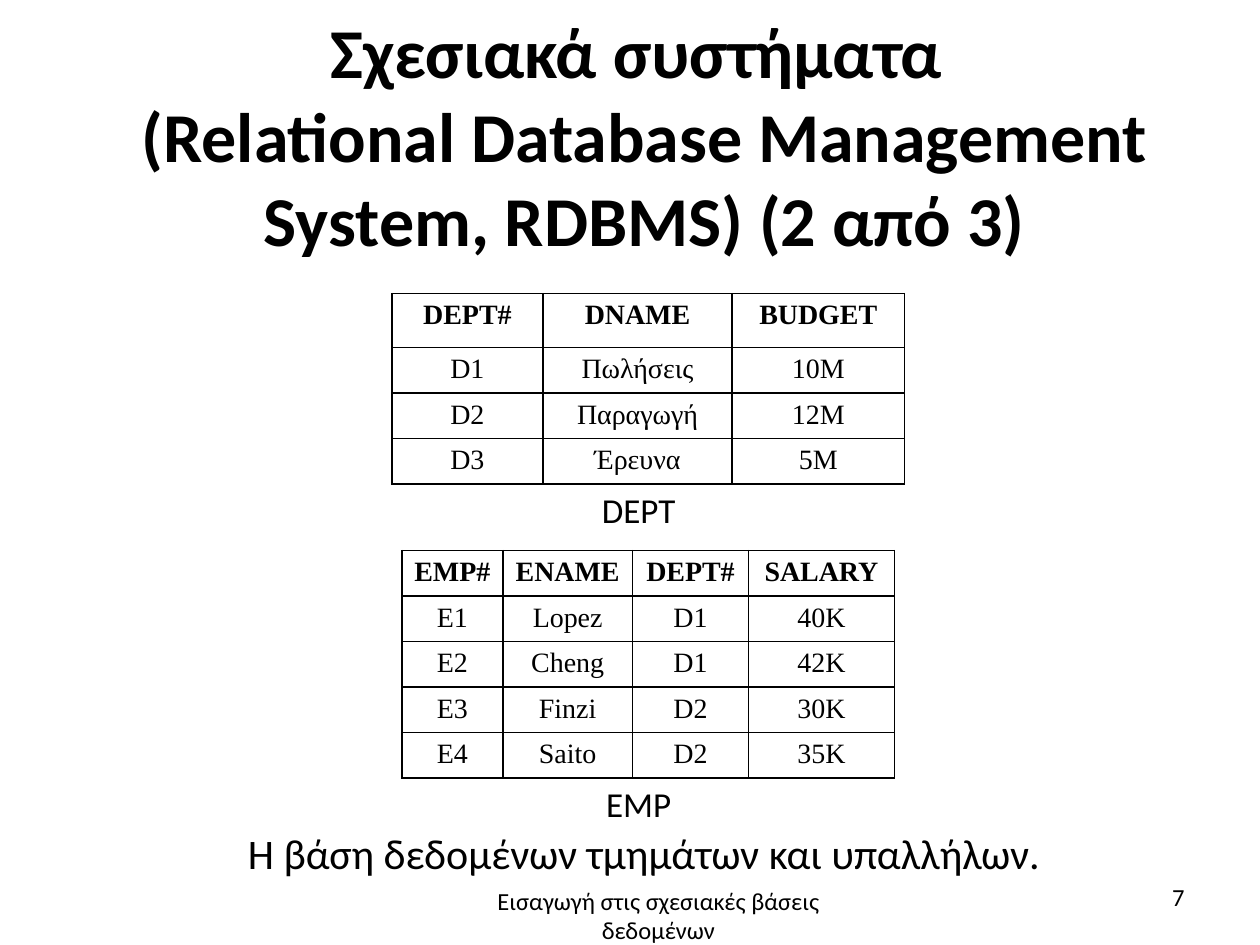
from lxml import etree
from pptx import Presentation
from pptx.dml.color import RGBColor
from pptx.enum.text import MSO_ANCHOR, MSO_AUTO_SIZE, PP_ALIGN
from pptx.oxml import parse_xml
from pptx.oxml.ns import qn
from pptx.util import Pt

BLACK = "000000"
NAMESPACE = "http://schemas.openxmlformats.org/drawingml/2006/main"


def color(hex_string):
    return RGBColor.from_string(hex_string)


def write(frame, text, size=14, font="Calibri", bold=False, align=PP_ALIGN.CENTER):
    frame.text = text
    for paragraph in frame.paragraphs:
        paragraph.alignment = align
        for run in paragraph.runs:
            run.font.size = Pt(size)
            run.font.name = font
            run.font.bold = bold
            run.font.color.rgb = color(BLACK)


presentation = Presentation()
presentation.slide_width = Pt(720)
presentation.slide_height = Pt(540)
slide = presentation.slides.add_slide(presentation.slide_layouts[1])

title = slide.shapes.title
title.left, title.top, title.width, title.height = Pt(36.7), Pt(-2.2), Pt(663), Pt(157.7)
write(
    title.text_frame,
    "Σχεσιακά συστήματα \n(Relational Database Management System, RDBMS) (2 από 3)",
    size=40,
    bold=True,
)
title.text_frame.vertical_anchor = MSO_ANCHOR.MIDDLE
title.text_frame.auto_size = MSO_AUTO_SIZE.NONE

captions = slide.placeholders[1]
captions.left, captions.top, captions.width, captions.height = Pt(69.8), Pt(275.8), Pt(590.4), Pt(221)
write(captions.text_frame, "DEPT\nEMP", size=20)
captions.text_frame.auto_size = MSO_AUTO_SIZE.NONE
for paragraph, space_before in zip(captions.text_frame.paragraphs, (4, 143.6)):
    paragraph.space_before = Pt(space_before)
    properties = paragraph.runs[0].font._element.getparent().getparent().get_or_add_pPr()
    properties.set("marL", "0")
    properties.set("indent", "0")
    etree.SubElement(properties, qn("a:buNone"))

tables = [
    (223.9, 167.8, [86.4, 108, 98.6], [30.7, 26, 26, 26], [
        ["DEPT#", "DNAME", "BUDGET"],
        ["D1", "Πωλήσεις", "10Μ"],
        ["D2", "Παραγωγή", "12Μ"],
        ["D3", "Έρευνα", "5Μ"],
    ]),
    (229.7, 314.6, [57.6, 74.2, 66.2, 83.5], [26] * 5, [
        ["EMP#", "ENAME", "DEPT#", "SALARY"],
        ["E1", "Lopez", "D1", "40K"],
        ["E2", "Cheng", "D1", "42K"],
        ["E3", "Finzi", "D2", "30K"],
        ["E4", "Saito", "D2", "35K"],
    ]),
]
for left, top, widths, heights, rows in tables:
    table = slide.shapes.add_table(
        len(rows), len(widths), Pt(left), Pt(top), Pt(sum(widths)), Pt(sum(heights))
    ).table
    table.first_row = False
    table.horz_banding = False
    for column, width in zip(table.columns, widths):
        column.width = Pt(width)
    for row_index, (row, height) in enumerate(zip(rows, heights)):
        table.rows[row_index].height = Pt(height)
        for column_index, text in enumerate(row):
            cell = table.cell(row_index, column_index)
            write(cell.text_frame, text, size=16, font="Times New Roman", bold=row_index == 0)
            cell.margin_left = cell.margin_right = Pt(6.5)
            cell.margin_top = cell.margin_bottom = Pt(3.6)
            cell_properties = cell._tc.get_or_add_tcPr()
            for side in ("lnL", "lnR", "lnT", "lnB"):
                cell_properties.append(parse_xml(
                    f'<a:{side} xmlns:a="{NAMESPACE}" w="{Pt(1)}"><a:solidFill>'
                    f'<a:srgbClr val="{BLACK}"/></a:solidFill></a:{side}>'
                ))
            cell.fill.background()

text_boxes = [
    (134.6, 469.4, 471.6, 36, "Η βάση δεδομένων τμημάτων και υπαλλήλων.", 24, PP_ALIGN.LEFT, False),
    (250.6, 502.6, 251.3, 39.6, "Εισαγωγή στις σχεσιακές βάσεις δεδομένων", 14, PP_ALIGN.CENTER, True),
    (516.2, 500.4, 167.8, 28.8, "7", 14, PP_ALIGN.RIGHT, True),
]
for left, top, width, height, text, size, align, wrap in text_boxes:
    text_box = slide.shapes.add_textbox(Pt(left), Pt(top), Pt(width), Pt(height))
    text_box.text_frame.word_wrap = wrap
    write(text_box.text_frame, text, size=size, align=align)

presentation.save("out.pptx")
